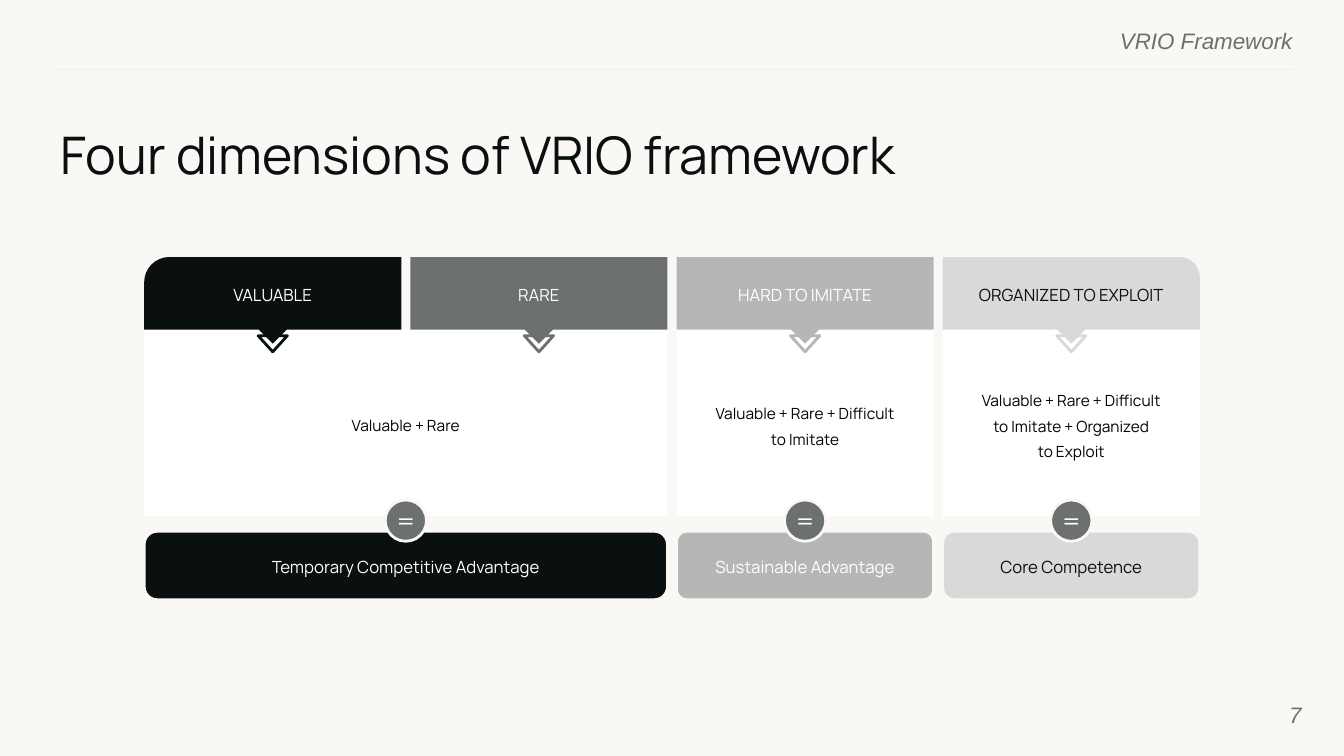
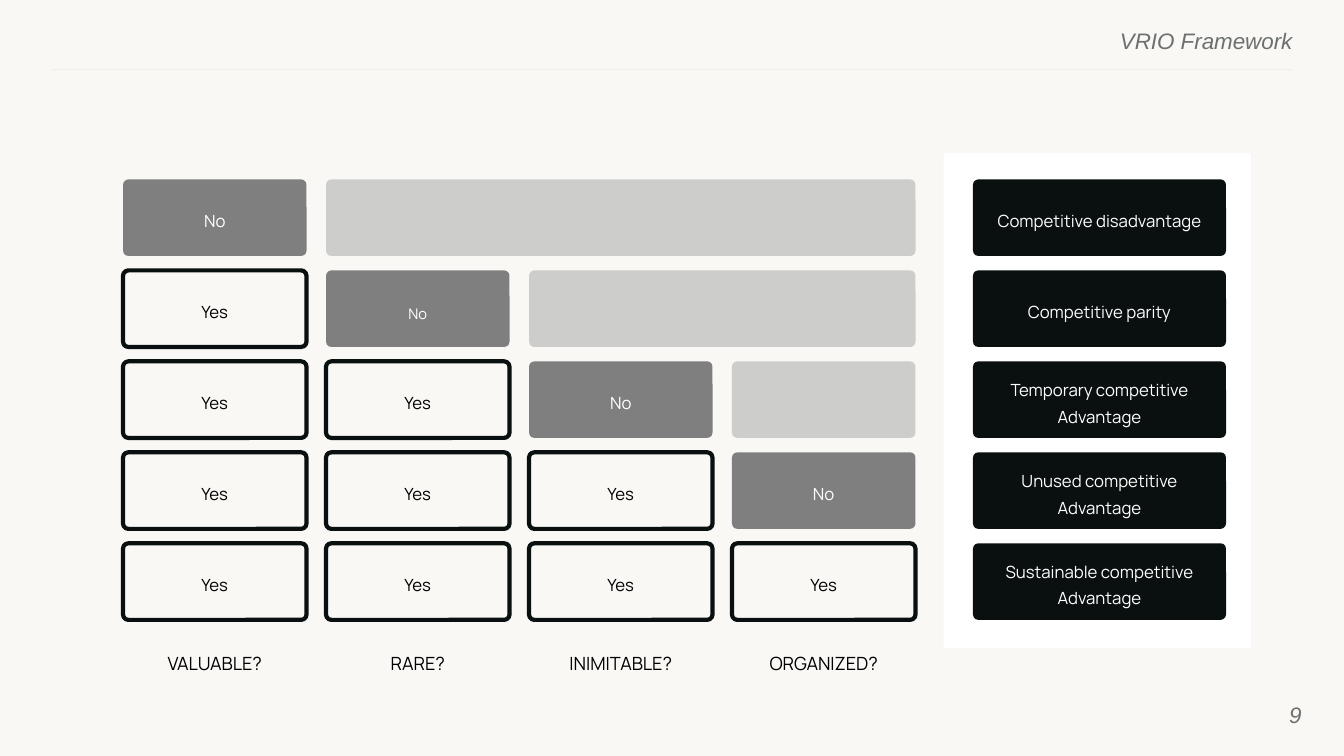
from dataclasses import dataclass

from lxml.etree import SubElement
from pptx import Presentation
from pptx.dml.color import RGBColor
from pptx.enum.shapes import MSO_CONNECTOR, MSO_SHAPE
from pptx.enum.text import MSO_ANCHOR, MSO_AUTO_SIZE, PP_ALIGN
from pptx.oxml.ns import qn
from pptx.presentation import Presentation as Deck
from pptx.shapes.autoshape import Shape
from pptx.slide import Slide
from pptx.util import Inches, Pt


@dataclass(frozen=True)
class Theme:
    paper: str = "F9F8F5"
    ink: str = "09100F"
    black: str = "000000"
    white: str = "FFFFFF"
    slate: str = "6C706F"
    silver: str = "B5B7B7"
    mist: str = "D9D9D9"
    rule: str = "EFEFEF"
    refusal: str = "7F7F7F"
    skipped: str = "BFBFBF"
    body_font: str = "Manrope"
    frame_font: str = "Arial"
    title_size: float = 37
    equals_size: float = 19
    frame_size: float = 16
    question_size: float = 13
    label_size: float = 12
    detail_size: float = 11
    small_size: float = 10.5


THEME = Theme()


@dataclass(frozen=True)
class Box:
    left: float
    top: float
    width: float
    height: float

    @property
    def center(self) -> float:
        return self.left + self.width / 2


@dataclass(frozen=True)
class TextStyle:
    size: float = THEME.label_size
    color: str = THEME.black
    font: str = THEME.body_font
    italic: bool = False
    align: PP_ALIGN = PP_ALIGN.CENTER
    anchor: MSO_ANCHOR = MSO_ANCHOR.MIDDLE
    spacing: float = 1.0
    grow: bool = False


@dataclass(frozen=True)
class Dimension:
    name: str
    color: str
    text_color: str = THEME.white
    left_radius: float = 0
    right_radius: float = 0


@dataclass(frozen=True)
class Outcome:
    first: int
    span: int
    detail: tuple[str, ...]
    detail_box: Box
    detail_spacing: float
    advantage: str
    color: str
    text_color: str
    rounding: float


DIMENSIONS = (
    Dimension("VALUABLE", THEME.ink, left_radius=0.25),
    Dimension("RARE", THEME.slate),
    Dimension("HARD TO IMITATE", THEME.silver),
    Dimension("ORGANIZED TO EXPLOIT", THEME.mist, THEME.ink, right_radius=0.2),
)
OUTCOMES = (
    Outcome(0, 2, ("Valuable + Rare",), Box(2.54, 4.12, 2.97, 0.19), 1.0,
            "Temporary Competitive Advantage", THEME.ink, THEME.white, 0.19),
    Outcome(2, 1, ("Valuable + Rare + Difficult to Imitate",), Box(7.08, 3.99, 1.81, 0.41), 1.38,
            "Sustainable Advantage", THEME.silver, THEME.white, 0.15),
    Outcome(3, 1, ("Valuable + Rare + Difficult", "to Imitate + Organized", "to Exploit"),
            Box(9.47, 3.88, 2.31, 0.62), 1.38,
            "Core Competence", THEME.mist, THEME.ink, 0.17),
)
QUESTIONS = ("VALUABLE?", "RARE?", "INIMITABLE?", "ORGANIZED?")
VERDICTS = (
    ("Competitive disadvantage",),
    ("Competitive parity",),
    ("Temporary competitive", "Advantage"),
    ("Unused competitive", "Advantage"),
    ("Sustainable competitive", "Advantage"),
)
RUNNING = TextStyle(THEME.frame_size, THEME.slate, THEME.frame_font, True, PP_ALIGN.RIGHT)


def write(shape: Shape, lines: tuple[str, ...], style: TextStyle) -> None:
    frame = shape.text_frame
    frame.margin_left = frame.margin_right = frame.margin_top = frame.margin_bottom = 0
    frame.word_wrap = True
    frame.vertical_anchor = style.anchor
    frame.auto_size = MSO_AUTO_SIZE.SHAPE_TO_FIT_TEXT if style.grow else MSO_AUTO_SIZE.NONE
    for index, line in enumerate(lines):
        paragraph = frame.add_paragraph() if index else frame.paragraphs[0]
        paragraph.alignment = style.align
        paragraph.line_spacing = style.spacing
        run = paragraph.add_run()
        run.text = line
        run.font.name = style.font
        run.font.size = Pt(style.size)
        run.font.italic = style.italic
        run.font.color.rgb = RGBColor.from_string(style.color)


def add_text(slide: Slide, box: Box, lines: tuple[str, ...], style: TextStyle) -> Shape:
    area = slide.shapes.add_textbox(
        Inches(box.left), Inches(box.top), Inches(box.width), Inches(box.height))
    write(area, lines, style)
    return area


def paint(shape: Shape, fill: str | None, line: str | None = None, weight: float = 2) -> None:
    shape.shadow.inherit = False
    if fill:
        shape.fill.solid()
        shape.fill.fore_color.rgb = RGBColor.from_string(fill)
    else:
        shape.fill.background()
    if line:
        shape.line.color.rgb = RGBColor.from_string(line)
        shape.line.width = Pt(weight)
    else:
        shape.line.fill.background()


def add_block(slide: Slide, kind: MSO_SHAPE, box: Box, fill: str | None,
              line: str | None = None, weight: float = 2, rounding: float | None = None) -> Shape:
    block = slide.shapes.add_shape(
        kind, Inches(box.left), Inches(box.top), Inches(box.width), Inches(box.height))
    paint(block, fill, line, weight)
    if rounding is not None:
        block.adjustments[0] = rounding
    return block


def add_page(deck: Deck, number: int) -> Slide:
    slide = deck.slides.add_slide(deck.slide_layouts[6])
    add_text(slide, Box(12.11, 6.8, 0.8, 0.57), (str(number),), RUNNING)
    return slide


def frame_layout(deck: Deck, slide: Slide) -> None:
    heading = add_text(slide, Box(7.68, 0.27, 5.14, 0.24), ("VRIO Framework",), RUNNING)
    heading.text_frame.vertical_anchor = MSO_ANCHOR.TOP
    rule = slide.shapes.add_connector(
        MSO_CONNECTOR.STRAIGHT, Inches(12.82), Inches(0.69), Inches(0.52), Inches(0.69))
    rule.line.color.rgb = RGBColor.from_string(THEME.rule)
    rule.line.width = Pt(0.75)
    SubElement(rule._element.spPr, qn("a:effectLst"))
    tree = deck.slide_layouts[6].shapes._spTree
    for part in (heading, rule):
        tree.append(part._element)


def round_corner(segment, start: tuple[int, int], corner: tuple[int, int]) -> None:
    end_point = segment[0]
    end = int(end_point.get("x")), int(end_point.get("y"))
    pull = 0.55
    segment.tag = qn("a:cubicBezTo")
    for index, anchor in enumerate((start, end)):
        x, y = (round(a + pull * (c - a)) for a, c in zip(anchor, corner))
        control = SubElement(segment, qn("a:pt"), x=str(x), y=str(y))
        segment.insert(index, control)


def add_header(slide: Slide, box: Box, dimension: Dimension) -> None:
    right, bottom = box.left + box.width, box.top + box.height
    notch = 0.14
    left_r, right_r = dimension.left_radius, dimension.right_radius
    outline = [(box.left, box.top + left_r)]
    if left_r:
        outline.append((box.left + left_r, box.top))
    if right_r:
        outline.append((right - right_r, box.top))
    outline += [
        (right, box.top + right_r), (right, bottom), (box.center + notch, bottom),
        (box.center, bottom + notch), (box.center - notch, bottom), (box.left, bottom),
    ]
    points = [(Inches(x), Inches(y)) for x, y in outline]
    builder = slide.shapes.build_freeform(*points[0])
    builder.add_line_segments(points[1:], close=True)
    header = builder.convert_to_shape()
    paint(header, dimension.color)
    segments = list(header._element.iter(qn("a:lnTo")))
    if left_r:
        round_corner(segments[0], (0, Inches(left_r)), (0, 0))
    if right_r:
        round_corner(segments[1], (Inches(box.width - right_r), 0), (Inches(box.width), 0))

    label_box = Box(box.center - 1.05, 2.82, 2.1, 0.2)
    style = TextStyle(color=dimension.text_color, grow=True)
    if left_r:
        add_text(slide, label_box, (dimension.name,), style)
    else:
        label = add_block(slide, MSO_SHAPE.RECTANGLE, label_box, dimension.color)
        write(label, (dimension.name,), style)


def build_dimensions(slide: Slide) -> None:
    add_text(slide, Box(0.6, 1.22, 9.64, 0.68), ("Four dimensions of VRIO framework",),
             TextStyle(THEME.title_size, THEME.ink, align=PP_ALIGN.LEFT, anchor=MSO_ANCHOR.TOP))
    left, width, gap = 1.43, 2.55, 0.09
    pitch = width + gap
    for outcome in OUTCOMES:
        start, extent = left + outcome.first * pitch, outcome.span * pitch - gap
        panel = Box(start, 3.26, extent, 1.86)
        add_block(slide, MSO_SHAPE.RECTANGLE, panel, THEME.white)
        add_text(slide, outcome.detail_box, outcome.detail,
                 TextStyle(THEME.detail_size, spacing=outcome.detail_spacing, grow=True))
        advantage = add_block(slide, MSO_SHAPE.ROUNDED_RECTANGLE, Box(start, 5.27, extent, 0.68),
                              outcome.color, THEME.paper, rounding=outcome.rounding)
        write(advantage, (outcome.advantage,),
              TextStyle(color=outcome.text_color, spacing=1.17))
        diameter = 0.41
        equals = add_block(slide, MSO_SHAPE.OVAL,
                           Box(panel.center - diameter / 2, 4.96, diameter, diameter),
                           THEME.slate, THEME.paper)
        write(equals, ("=",), TextStyle(THEME.equals_size, THEME.white))
    for index, dimension in enumerate(DIMENSIONS):
        header = Box(left + index * pitch, 2.55, width, 0.72)
        chevron = add_block(slide, MSO_SHAPE.ISOSCELES_TRIANGLE,
                            Box(header.center - 0.145, 3.33, 0.29, 0.16), None, dimension.color)
        chevron.rotation = 180
        add_header(slide, header, dimension)


def build_decisions(slide: Slide) -> None:
    left, top, width, height = 1.22, 1.78, 1.82, 0.76
    column_pitch = (7.26 - left) / (len(QUESTIONS) - 1)
    row_pitch = (5.39 - top) / (len(VERDICTS) - 1)
    last_right = left + (len(QUESTIONS) - 1) * column_pitch + width
    rounding = 0.07
    answer = TextStyle(spacing=1.33)
    negative = TextStyle(color=THEME.white, spacing=1.33)
    small_negative = TextStyle(THEME.small_size, THEME.white, spacing=1.52)
    add_block(slide, MSO_SHAPE.RECTANGLE, Box(9.36, 1.52, 3.05, 4.91), THEME.white)

    for row, verdict in enumerate(VERDICTS):
        y = top + row * row_pitch
        for column in range(min(row + 1, len(QUESTIONS))):
            cell = Box(left + column * column_pitch, y, width, height)
            if column < row:
                yes = add_block(slide, MSO_SHAPE.ROUNDED_RECTANGLE, cell,
                                THEME.paper, THEME.ink, 3, rounding)
                write(yes, ("Yes",), answer)
            else:
                no = add_block(slide, MSO_SHAPE.ROUNDED_RECTANGLE, cell,
                               THEME.refusal, rounding=rounding)
                write(no, ("No",), small_negative if row == 1 else negative)
        if row + 1 < len(QUESTIONS):
            x = left + (row + 1) * column_pitch
            skipped = add_block(slide, MSO_SHAPE.ROUNDED_RECTANGLE,
                                Box(x, y, last_right - x, height),
                                THEME.skipped, rounding=rounding)
            tint = skipped._element.spPr.find(qn("a:solidFill"))[0]
            SubElement(tint, qn("a:alpha"), val="75000")
        result = add_block(slide, MSO_SHAPE.ROUNDED_RECTANGLE, Box(9.65, y, 2.51, height),
                           THEME.ink, rounding=rounding)
        write(result, verdict, negative)

    for column, question in enumerate(QUESTIONS):
        add_text(slide, Box(left + column * column_pitch + 0.14, 6.43, 1.54, 0.23), (question,),
                 TextStyle(THEME.question_size, spacing=1.32, grow=True))


def main() -> None:
    deck = Presentation()
    deck.slide_width, deck.slide_height = Inches(13.33), Inches(7.5)
    backdrop = deck.slide_master.background.fill
    backdrop.solid()
    backdrop.fore_color.rgb = RGBColor.from_string(THEME.paper)
    for placeholder in list(deck.slide_layouts[6].placeholders):
        placeholder.element.getparent().remove(placeholder.element)
    dimensions = add_page(deck, 7)
    frame_layout(deck, dimensions)
    build_dimensions(dimensions)
    build_decisions(add_page(deck, 9))
    deck.save("out.pptx")


if __name__ == "__main__":
    main()
